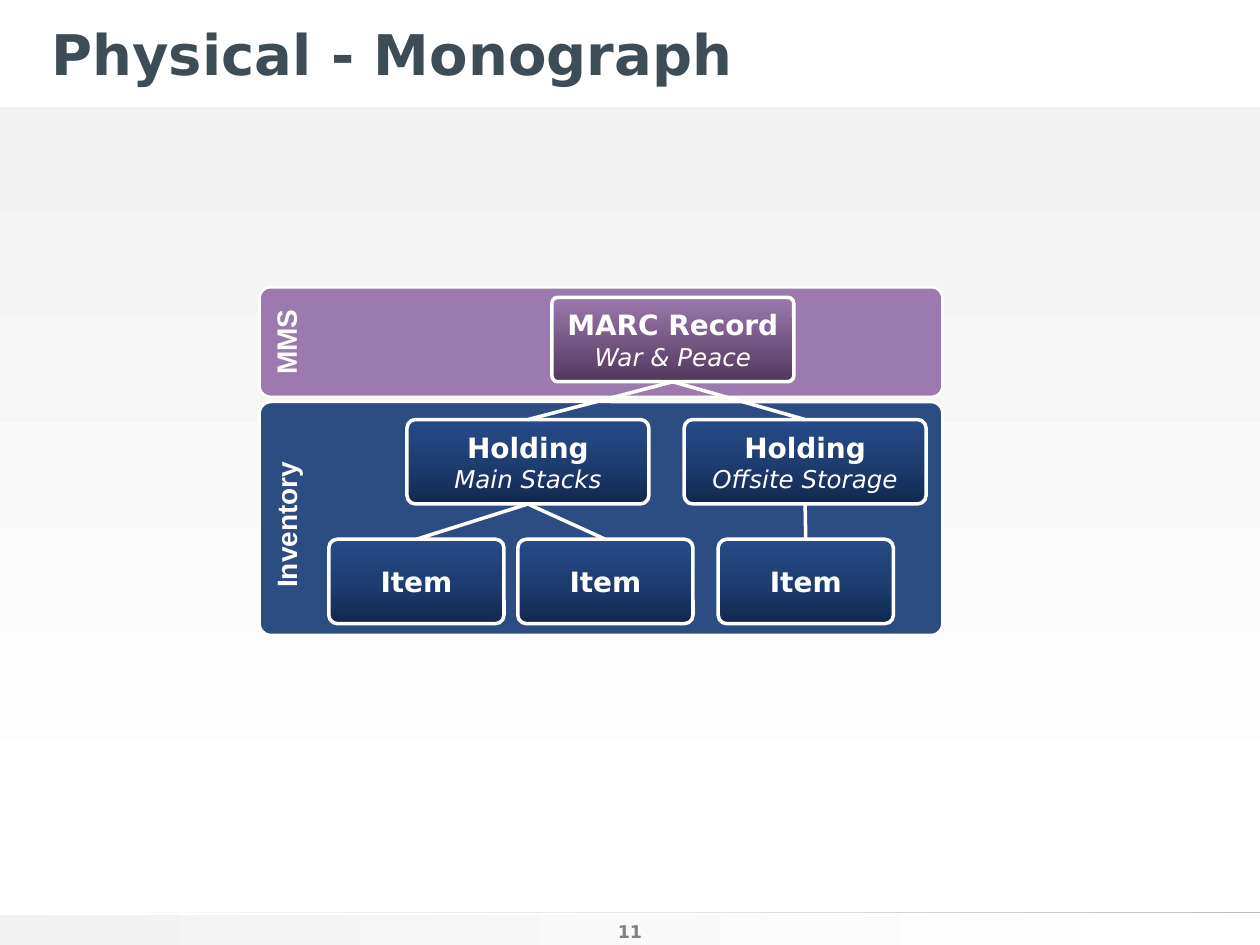
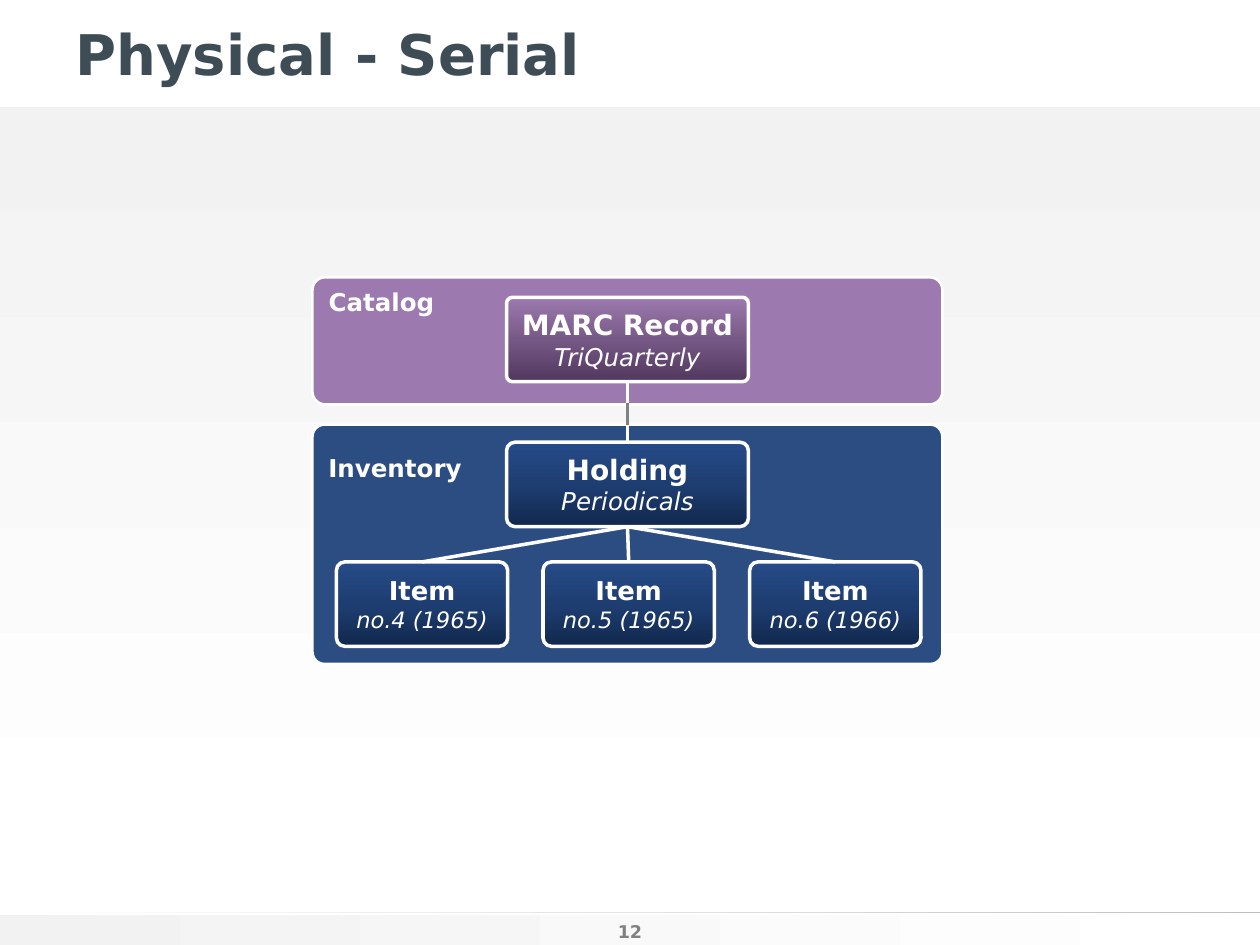
from dataclasses import dataclass

from lxml import etree
from pptx import Presentation
from pptx import util as u
from pptx.dml.color import RGBColor
from pptx.enum import shapes, text
from pptx.oxml import ns

SANS = "DejaVu Sans"
WHITE, GREY, SLATE = "FFFFFF", "808080", "3E4C56"
PURPLE, NAVY = "9C79AE", "2C4D82"
PALE = ((0, "F2F2F2"), (100, WHITE))
RULE = ((0, "BFBFBF"), (50, "E4E4E4"), (100, WHITE))
RECORD = ((0, "51385E"), (100, PURPLE))
STOCK = ((0, "11284D"), (50, "1E3E72"), (100, "264B88"))
NODE_H, WIDE = 0.67, 1.92
BOTTOM, TOP = 2, 0


@dataclass
class Band:
    label: str
    x: float
    y: float
    w: float
    h: float
    color: str
    adj: float
    top_inset: float = 0.05


@dataclass
class Node:
    x: float
    y: float
    w: float
    head: str
    detail: str = ""
    stops: tuple = STOCK
    adj: float = 0.1
    sizes: tuple = (16, 14)


def rgb(color: str) -> RGBColor:
    return RGBColor.from_string(color)


def write(p, words: str, size: float = 16, color: str = WHITE, font: str = SANS,
          bold: bool = True, italic: bool = False, align=text.PP_ALIGN.CENTER) -> None:
    p.alignment = align
    r = p.add_run()
    r.text = words
    f = r.font
    f.name, f.size, f.bold, f.italic = font, u.Pt(size), bold, italic
    f.color.rgb = rgb(color)


def add_gradient(sp, stops: tuple, angle: int) -> None:
    grad = etree.SubElement(sp.element.spPr, ns.qn("a:gradFill"), rotWithShape="1")
    gs_list = etree.SubElement(grad, ns.qn("a:gsLst"))
    for pos, color in stops:
        gs = etree.SubElement(gs_list, ns.qn("a:gs"), pos=str(pos * 1000))
        etree.SubElement(gs, ns.qn("a:srgbClr"), val=color)
    etree.SubElement(grad, ns.qn("a:lin"), ang=str(angle * 60000), scaled="0")


def add_box(s, kind, x: float, y: float, w: float, h: float, color: str = "",
            stops: tuple = (), angle: int = 0, line: float = 0, adj: float = 0):
    sp = s.shapes.add_shape(kind, *map(u.Inches, (x, y, w, h)))
    if stops:
        add_gradient(sp, stops, angle)
    else:
        sp.fill.solid()
        sp.fill.fore_color.rgb = rgb(color)
    if line:
        sp.line.color.rgb = rgb(WHITE)
        sp.line.width = u.Pt(line)
    else:
        sp.line.fill.background()
    if adj:
        sp.adjustments[0] = adj
    sp.shadow.inherit = False
    return sp


def add_page(prs, title: str, number: int, x: float, w: float):
    s = prs.slides.add_slide(prs.slide_layouts[5])
    rect = shapes.MSO_SHAPE.RECTANGLE
    for y, h, stops, angle in ((7.26, 0.24, PALE, 0), (0.85, 5.84, PALE, 90), (7.24, 0.01, RULE, 180)):
        add_box(s, rect, 0, y, 10, h, stops=stops, angle=angle)

    tf = s.shapes.add_textbox(*map(u.Inches, (4.68, 7.03, 0.64, 0.5))).text_frame
    tf.word_wrap = True
    tf.vertical_anchor = text.MSO_ANCHOR.BOTTOM
    write(tf.paragraphs[0], str(number), size=10, color=GREY)

    sp = s.shapes.title
    sp.left, sp.top, sp.width, sp.height = map(u.Inches, (x, 0.13, w, 0.58))
    tf = sp.text_frame
    tf.auto_size = text.MSO_AUTO_SIZE.NONE
    tf.vertical_anchor = text.MSO_ANCHOR.MIDDLE
    write(tf.paragraphs[0], title, size=32, color=SLATE, align=text.PP_ALIGN.LEFT)
    return s


def add_band(s, band: Band, vertical: bool) -> None:
    sp = add_box(s, shapes.MSO_SHAPE.ROUNDED_RECTANGLE, band.x, band.y, band.w, band.h,
                 color=band.color, line=1.5, adj=band.adj)
    tf = sp.text_frame
    tf.vertical_anchor = text.MSO_ANCHOR.TOP
    tf.margin_top = u.Inches(band.top_inset)
    p = tf.paragraphs[0]
    if vertical:
        sp.element.txBody.bodyPr.set("vert", "vert270")
        write(p, band.label, font="Arial")
    else:
        write(p, band.label, size=14, align=text.PP_ALIGN.LEFT)


def add_node(s, node: Node):
    sp = add_box(s, shapes.MSO_SHAPE.ROUNDED_RECTANGLE, node.x, node.y, node.w, NODE_H,
                 stops=node.stops, angle=270, line=2, adj=node.adj)
    tf = sp.text_frame
    tf.vertical_anchor = text.MSO_ANCHOR.MIDDLE
    write(tf.paragraphs[0], node.head, size=node.sizes[0])
    if node.detail:
        write(tf.add_paragraph(), node.detail, size=node.sizes[1], bold=False, italic=True)
    return sp


def add_line(s, x1: float = 0, y1: float = 0, x2: float = 0, y2: float = 0, color: str = WHITE):
    c = s.shapes.add_connector(shapes.MSO_CONNECTOR.STRAIGHT, *map(u.Inches, (x1, y1, x2, y2)))
    c.line.color.rgb = rgb(color)
    c.line.width = u.Pt(2)
    etree.SubElement(c.element.spPr, ns.qn("a:effectLst"))
    return c


def link(s, parent, child) -> None:
    c = add_line(s)
    c.begin_connect(parent, BOTTOM)
    c.end_connect(child, TOP)


def build_monograph(prs) -> None:
    s = add_page(prs, "Physical - Monograph", 11, 0.31, 9.6)
    add_band(s, Band("Inventory", 2.06, 3.19, 5.42, 1.85, NAVY, 0.05, 0.2), vertical=True)
    add_band(s, Band("MMS", 2.06, 2.28, 5.42, 0.87, PURPLE, 0.1), vertical=True)
    record = add_node(s, Node(4.38, 2.36, WIDE, "MARC Record", "War & Peace", RECORD, 0.07))
    holdings = (("Main Stacks", 3.23, (2.61, 4.11)), ("Offsite Storage", 5.43, (5.7,)))
    for place, x, item_xs in holdings:
        holding = add_node(s, Node(x, 3.33, WIDE, "Holding", place))
        link(s, record, holding)
        for item_x in item_xs:
            link(s, holding, add_node(s, Node(item_x, 4.28, 1.39, "Item")))


def build_serial(prs) -> None:
    s = add_page(prs, "Physical - Serial", 12, 0.5, 9)
    add_band(s, Band("Inventory", 2.48, 3.37, 5, 1.9, NAVY, 0.05, 0.2), vertical=False)
    add_band(s, Band("Catalog", 2.48, 2.2, 5, 1.01, PURPLE, 0.1), vertical=False)
    record = add_node(s, Node(4.02, 2.36, WIDE, "MARC Record", "TriQuarterly", RECORD, 0.07))
    holding = add_node(s, Node(4.02, 3.51, WIDE, "Holding", "Periodicals"))
    link(s, record, holding)
    add_line(s, 4.98, 3.2, 4.98, 3.37, GREY)
    for i, issue in enumerate(("no.4 (1965)", "no.5 (1965)", "no.6 (1966)")):
        item = Node(2.67 + 1.64 * i, 4.46, 1.36, "Item", issue, sizes=(14.8, 12.9))
        link(s, holding, add_node(s, item))


def main() -> None:
    prs = Presentation()
    prs.slide_width, prs.slide_height = u.Inches(10), u.Inches(7.5)
    build_monograph(prs)
    build_serial(prs)
    prs.save("out.pptx")


if __name__ == "__main__":
    main()
